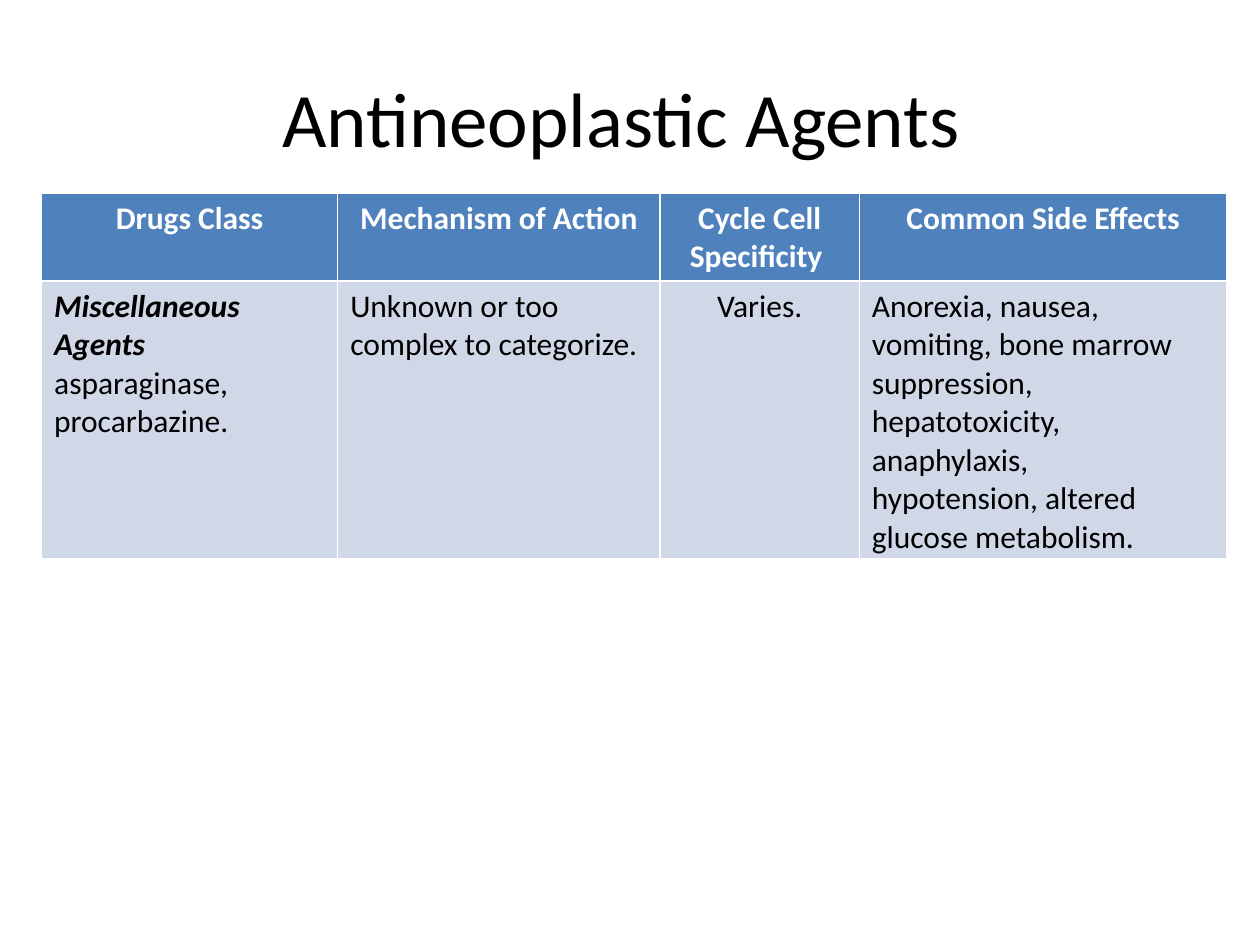
"""Build a slide with a table describing miscellaneous antineoplastic agents."""
from pptx import Presentation
from pptx import util as u
from pptx.dml.color import RGBColor
from pptx.enum import text

TITLE = "Antineoplastic Agents "
HEADERS = ["Drugs Class", "Mechanism of Action", "Cycle Cell Specificity ", "Common Side Effects"]
AGENTS = [
    "Miscellaneous Agents\nasparaginase, procarbazine.",
    "Unknown or too complex to categorize.",
    "Varies.",
    "Anorexia, nausea, vomiting, bone marrow suppression,\n"
    "hepatotoxicity, anaphylaxis,\nhypotension, altered glucose metabolism.",
]
COLUMN_WIDTHS = [2.35, 2.56, 1.58, 2.92]
ROW_HEIGHTS = [0.7, 2.2]
CENTERED_COLUMN = 2

FONT = "Calibri"
BLACK = RGBColor(0x00, 0x00, 0x00)
WHITE = RGBColor(0xFF, 0xFF, 0xFF)
HEADER_BLUE = RGBColor(0x4F, 0x81, 0xBD)
BODY_BLUE = RGBColor(0xD0, 0xD8, 0xE8)


def write(frame, content, size, color, centered, bold=False):
    frame.text = content
    for para in frame.paragraphs:
        para.alignment = text.PP_ALIGN.CENTER if centered else text.PP_ALIGN.LEFT
        for span in para.runs:
            span.font.name = FONT
            span.font.size = u.Pt(size)
            span.font.color.rgb = color
            span.font.bold = bold


def add_title(page):
    box = page.shapes.add_textbox(u.Inches(0.5), u.Inches(0.3), u.Inches(9), u.Inches(1.25))
    frame = box.text_frame
    frame.word_wrap = True
    frame.vertical_anchor = text.MSO_ANCHOR.MIDDLE
    write(frame, TITLE, 44, BLACK, centered=True)


def add_agent_table(page):
    table = page.shapes.add_table(
        len(ROW_HEIGHTS), len(COLUMN_WIDTHS), u.Inches(0.33), u.Inches(1.53),
        u.Inches(sum(COLUMN_WIDTHS)), u.Inches(sum(ROW_HEIGHTS))).table
    for column, width in zip(table.columns, COLUMN_WIDTHS):
        column.width = u.Inches(width)
    for row, height in zip(table.rows, ROW_HEIGHTS):
        row.height = u.Inches(height)
    for r, contents in enumerate([HEADERS, AGENTS]):
        header = r == 0
        for c, content in enumerate(contents):
            cell = table.cell(r, c)
            cell.fill.solid()
            cell.fill.fore_color.rgb = HEADER_BLUE if header else BODY_BLUE
            write(cell.text_frame, content, 18, WHITE if header else BLACK,
                  centered=header or c == CENTERED_COLUMN, bold=header)
    class_name = table.cell(1, 0).text_frame.paragraphs[0].runs[0]
    class_name.font.bold = class_name.font.italic = True


def main():
    deck = Presentation()
    deck.slide_width, deck.slide_height = u.Inches(10), u.Inches(7.5)
    page = deck.slides.add_slide(deck.slide_layouts[6])
    add_title(page)
    add_agent_table(page)
    deck.save("out.pptx")


if __name__ == "__main__":
    main()
